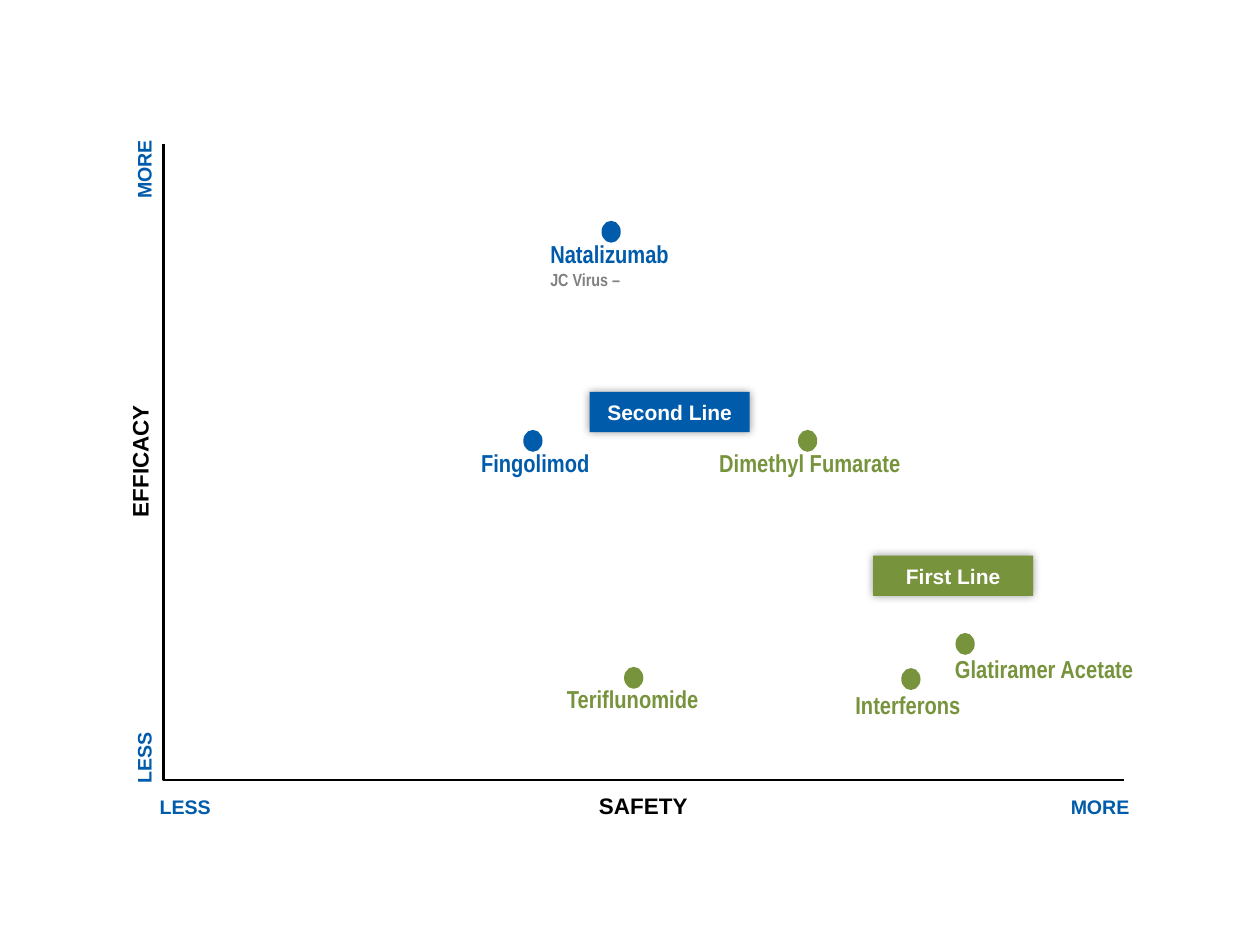
"""Build a slide that maps therapies by safety and efficacy."""
from lxml.etree import SubElement
from pptx import Presentation
from pptx.dml.color import RGBColor
from pptx.enum.shapes import MSO_SHAPE
from pptx.enum.text import MSO_ANCHOR, MSO_AUTO_SIZE, PP_ALIGN
from pptx.oxml.ns import qn
from pptx.util import Pt

COLORS = {
    "blue": "005CAB",
    "green": "77933C",
    "gray": "808080",
    "black": "000000",
    "white": "FFFFFF",
}
DOT_WIDTH, DOT_HEIGHT = 10, 11.5
BADGE_WIDTH, BADGE_HEIGHT = 91.4, 23
LABEL_HEIGHT = 25.2

AXIS_LABELS = [
    ("efficacy", 37.4, 249.8, 83.5, 27.4, 16, "black", 270),
    ("safety", 333.4, 445.7, 68.4, 28, 16, "black", 0),
    ("more", 56.2, 84.2, 51.1, LABEL_HEIGHT, 14, "blue", 270),
    ("less", 58.3, 420.5, 46.8, LABEL_HEIGHT, 14, "blue", 270),
    ("less", 82.8, 447.8, 46.1, LABEL_HEIGHT, 14, "blue", 0),
    ("more", 603.4, 447.8, 50.4, LABEL_HEIGHT, 14, "blue", 0),
]
THERAPIES = [
    ("Natalizumab", "JC Virus –", "blue", (344.2, 126.7), (307.4, 133.2, 86.4, 38.2)),
    ("Fingolimod", "", "blue", (299.5, 246.2), (267.8, 252.7, 79.9, LABEL_HEIGHT)),
    ("Dimethyl Fumarate", "", "green", (456.5, 246.2), (403.9, 252.7, 123.8, LABEL_HEIGHT)),
    ("Teriflunomide", "", "green", (357.1, 381.6), (316.8, 387.4, 94.3, LABEL_HEIGHT)),
    ("Interferons", "", "green", (515.5, 382.3), (481.7, 391, 78.5, LABEL_HEIGHT)),
    ("Glatiramer Acetate", "", "green", (546.5, 362.2), (538.6, 370.1, 122.4, LABEL_HEIGHT)),
]
BADGES = [
    ("Second Line", 337, 223.9, "blue"),
    ("First Line", 499, 317.5, "green"),
]


def rgb(name):
    """Return the named colour."""
    return RGBColor.from_string(COLORS[name])


def add_run(paragraph, text, size, color, font="Arial"):
    """Append a bold run to a paragraph."""
    run = paragraph.add_run()
    run.text = text
    run.font.name = font
    run.font.size = Pt(size)
    run.font.bold = True
    run.font.color.rgb = rgb(color)
    return run


def add_text_box(slide, left, top, width, height):
    """Add an unwrapped text box and return it."""
    box = slide.shapes.add_textbox(Pt(left), Pt(top), Pt(width), Pt(height))
    box.text_frame.word_wrap = False
    box.text_frame.auto_size = MSO_AUTO_SIZE.SHAPE_TO_FIT_TEXT
    return box


def add_axes(slide):
    """Draw both axes as one open outline."""
    builder = slide.shapes.build_freeform(Pt(93.6), Pt(82.1))
    builder.add_line_segments([(Pt(93.6), Pt(445.7)), (Pt(642.2), Pt(445.7))], close=False)
    axes = builder.convert_to_shape()
    axes.shadow.inherit = False
    axes.fill.background()
    axes.line.color.rgb = rgb("black")
    axes.line.width = Pt(1.5)


def add_axis_label(slide, text, left, top, width, height, size, color, rotation):
    """Add a centred small-caps axis label."""
    box = add_text_box(slide, left, top, width, height)
    box.rotation = rotation
    paragraph = box.text_frame.paragraphs[0]
    paragraph.alignment = PP_ALIGN.CENTER
    run = add_run(paragraph, text, size, color)
    run.font._element.set("cap", "small")


def add_therapy(slide, name, note, color, dot_position, label_frame):
    """Add a therapy's dot with its name and optional note."""
    left, top = dot_position
    dot = slide.shapes.add_shape(
        MSO_SHAPE.OVAL, Pt(left), Pt(top), Pt(DOT_WIDTH), Pt(DOT_HEIGHT)
    )
    dot.shadow.inherit = False
    dot.fill.solid()
    dot.fill.fore_color.rgb = rgb(color)
    dot.line.color.rgb = rgb(color)
    dot.line.width = Pt(1)
    paragraph = add_text_box(slide, *label_frame).text_frame.paragraphs[0]
    add_run(paragraph, name, 14, color, "Arial Narrow")
    if note:
        paragraph.add_line_break()
        add_run(paragraph, note, 10, "gray", "Arial Narrow")


def add_glow_shadow(shape):
    """Give a shape a soft shadow on all sides."""
    shape.shadow.inherit = False
    effects = shape._element.spPr.find(qn("a:effectLst"))
    shadow = SubElement(effects, qn("a:outerShdw"), blurRad=str(Pt(5)), dist="0", dir="0")
    color = SubElement(shadow, qn("a:srgbClr"), val=COLORS["black"])
    SubElement(color, qn("a:alpha"), val="40000")


def add_badge(slide, text, left, top, color):
    """Add a filled treatment-line badge."""
    badge = slide.shapes.add_shape(
        MSO_SHAPE.RECTANGLE, Pt(left), Pt(top), Pt(BADGE_WIDTH), Pt(BADGE_HEIGHT)
    )
    badge.fill.solid()
    badge.fill.fore_color.rgb = rgb(color)
    badge.line.fill.background()
    add_glow_shadow(badge)
    badge.text_frame.word_wrap = False
    badge.text_frame.vertical_anchor = MSO_ANCHOR.MIDDLE
    paragraph = badge.text_frame.paragraphs[0]
    paragraph.alignment = PP_ALIGN.CENTER
    add_run(paragraph, text, 12, "white")


def main():
    """Build and save the presentation."""
    presentation = Presentation()
    presentation.slide_width, presentation.slide_height = Pt(720), Pt(540)
    slide = presentation.slides.add_slide(presentation.slide_layouts[6])
    add_axes(slide)
    for label in AXIS_LABELS:
        add_axis_label(slide, *label)
    for therapy in THERAPIES:
        add_therapy(slide, *therapy)
    for badge in BADGES:
        add_badge(slide, *badge)
    presentation.save("out.pptx")


if __name__ == "__main__":
    main()
